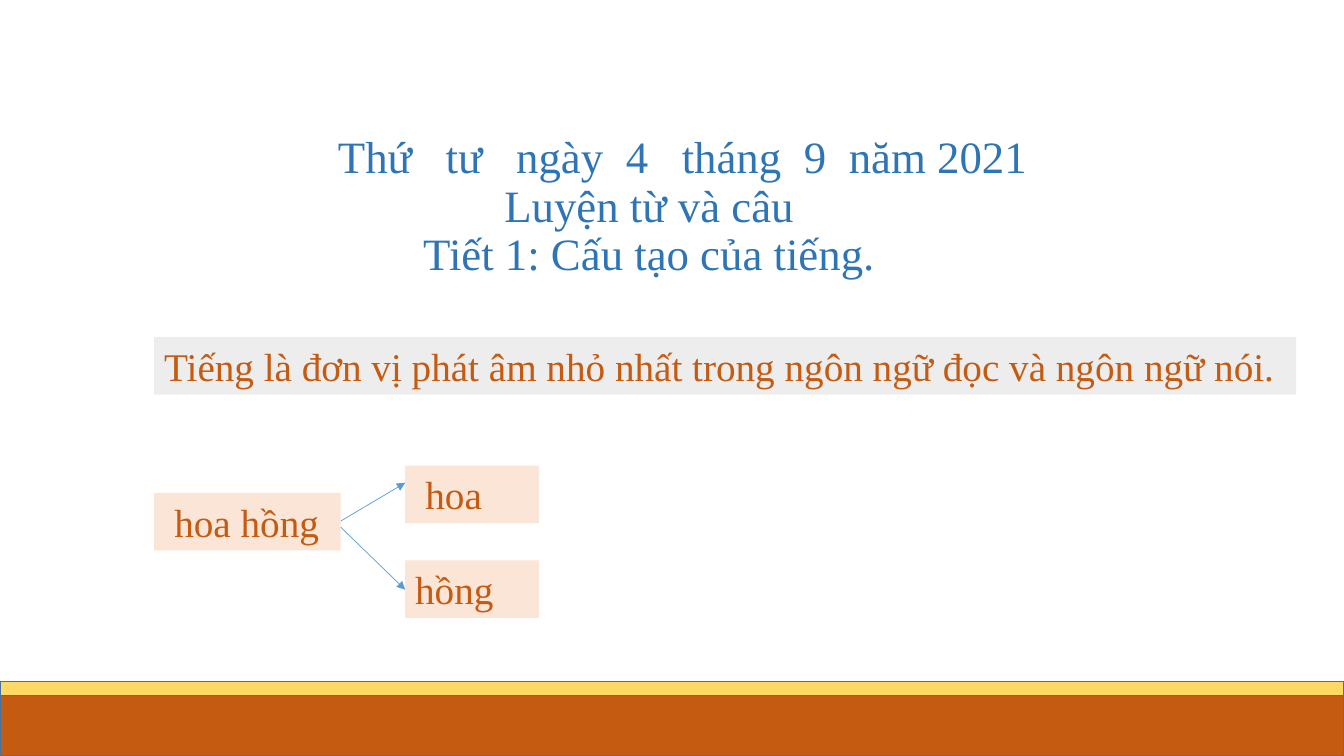
from lxml import etree
from pptx import Presentation
from pptx import util as u
from pptx.dml.color import RGBColor
from pptx.enum import shapes, text
from pptx.oxml import ns

WIDTH, HEIGHT = u.Inches(13.33), u.Inches(7.5)
COLUMN, ROW = WIDTH / 40, HEIGHT / 30
FONT = "Times New Roman"
BLUE = RGBColor(0x2E, 0x75, 0xB6)
ORANGE = RGBColor(0xC5, 0x5A, 0x11)
YELLOW = RGBColor(0xFF, 0xD9, 0x66)
BORDER = RGBColor(0x43, 0x73, 0x9E)
GRAY = RGBColor(0xED, 0xED, 0xED)
PEACH = RGBColor(0xFB, 0xE5, 0xD6)
ARROW = RGBColor(0x5B, 0x9B, 0xD5)
LABEL_HEIGHT = 2.28
DATE_WORDS = [("Thứ", 2), ("tư", 2), ("ngày", 1), ("4", 2), ("tháng", 1),
              ("9", 1), ("năm 2021", 0)]


def place(left, top, width, height):
    """Turn columns and rows into lengths."""
    return [u.Emu(round(n)) for n in
            (left * COLUMN, top * ROW, width * COLUMN, height * ROW)]


def write(paragraph, words, size=28, color=ORANGE, spacing=0):
    """Add a formatted run, with optional extra letter spacing in points."""
    run = paragraph.add_run()
    run.text = words
    run.font.name, run.font.size = FONT, u.Pt(size)
    run.font.color.rgb = color
    if spacing:
        run.font._element.set("spc", str(round(spacing * 100)))


def add_bar(slide, box, fill, line=None):
    """Add a flat rectangle."""
    shape = slide.shapes.add_shape(shapes.MSO_SHAPE.RECTANGLE, *place(*box))
    shape.shadow.inherit = False
    shape.fill.solid()
    shape.fill.fore_color.rgb = fill
    if line is None:
        shape.line.fill.background()
    else:
        shape.line.color.rgb, shape.line.width = line, u.Pt(1)
    return shape


def add_label(slide, box, words, fill, inset=0.1):
    """Add a filled box with one line of text at its left."""
    frame = add_bar(slide, box, fill).text_frame
    frame.word_wrap = False
    frame.margin_left = u.Inches(inset)
    frame.vertical_anchor = text.MSO_ANCHOR.TOP
    frame.paragraphs[0].alignment = text.PP_ALIGN.LEFT
    write(frame.paragraphs[0], words)


def add_arrow(slide, start, end):
    """Add a thin arrow between two grid points."""
    line = slide.shapes.add_connector(
        shapes.MSO_CONNECTOR.STRAIGHT, *place(*start, *end))
    line.line.color.rgb, line.line.width = ARROW, u.Pt(0.5)
    etree.SubElement(line.line._get_or_add_ln(), ns.qn("a:tailEnd"), type="triangle")
    etree.SubElement(line._element.spPr, ns.qn("a:effectLst"))


def add_title(slide, box):
    """Add the date, the subject and the lesson name."""
    frame = slide.shapes.add_textbox(*place(*box)).text_frame
    frame.word_wrap = True
    frame.vertical_anchor = text.MSO_ANCHOR.MIDDLE
    date = frame.paragraphs[0]
    date._p.get_or_add_pPr().set("marL", str(u.Inches(0.66)))
    for word, extra_spaces in DATE_WORDS:
        write(date, word, size=32, color=BLUE)
        if extra_spaces:
            write(date, " ", size=32, color=BLUE, spacing=8 * extra_spaces)
    for words in ("Luyện từ và câu", "Tiết 1: Cấu tạo của tiếng."):
        write(frame.add_paragraph(), words, size=32, color=BLUE)
    for paragraph in frame.paragraphs:
        paragraph.alignment = text.PP_ALIGN.CENTER
        paragraph.line_spacing = 0.9


def add_footer(slide, top):
    """Add the two bars that reach down to the slide's bottom."""
    for offset, fill in ((0, YELLOW), (0.56, ORANGE)):
        start = top + offset
        add_bar(slide, (0, start, 40, 30 - start), fill, line=BORDER)


def add_split(slide, left, top):
    """Add a word with arrows to its two syllables."""
    word_width, part_left = 5.55, left + 7.47
    add_label(slide, (left, top + 1.08, word_width, LABEL_HEIGHT),
              "hoa hồng", PEACH, inset=0.2)
    parts = (("hoa", 0, 0.2, 2.2, 0.68), ("hồng", 3.76, 0.1, 2.44, 4.92))
    for words, offset, inset, start, end in parts:
        add_label(slide, (part_left, top + offset, 3.98, LABEL_HEIGHT),
                  words, PEACH, inset=inset)
        add_arrow(slide, (left + word_width, top + start), (part_left, top + end))


def main():
    """Build and save the slide."""
    presentation = Presentation()
    presentation.slide_width, presentation.slide_height = WIDTH, HEIGHT
    slide = presentation.slides.add_slide(presentation.slide_layouts[6])
    add_title(slide, (2.07, 4.64, 34.5, 7.2))
    add_footer(slide, 27.04)
    add_label(slide, (4.59, 13.38, 33.99, LABEL_HEIGHT),
              "Tiếng là đơn vị phát âm nhỏ nhất trong ngôn ngữ đọc và ngôn ngữ nói.", GRAY)
    add_split(slide, 4.59, 18.48)
    presentation.save("out.pptx")


if __name__ == "__main__":
    main()
